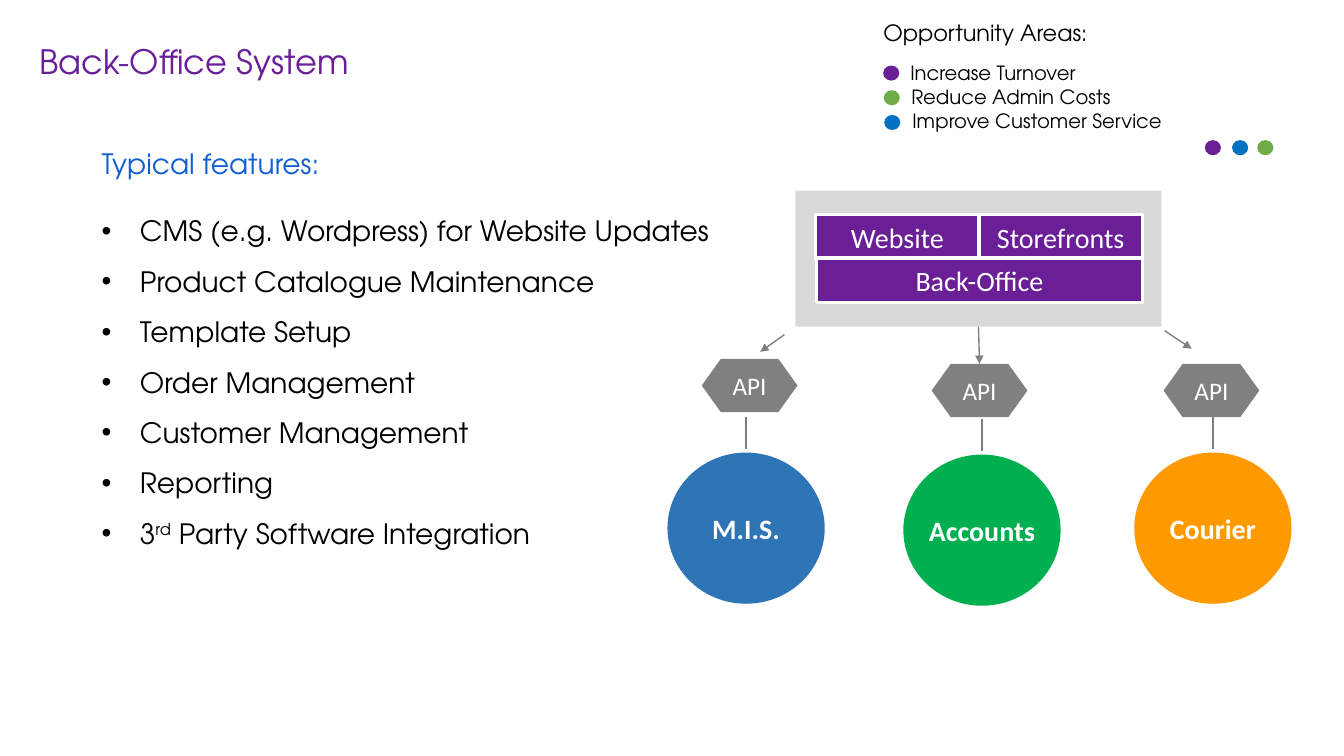
from dataclasses import dataclass

from lxml.etree import SubElement
from pptx import Presentation
from pptx.dml.color import RGBColor
from pptx.enum.shapes import MSO_CONNECTOR, MSO_SHAPE
from pptx.enum.text import MSO_ANCHOR, PP_ALIGN
from pptx.oxml.ns import qn
from pptx.util import Inches, Pt


@dataclass(frozen=True)
class Theme:
    heading_font: str = "TeX Gyre Adventor"
    diagram_font: str = "Calibri"
    title: str = "691F99"
    subtitle: str = "115FD4"
    black: str = "000000"
    white: str = "FFFFFF"
    purple: str = "6A1F96"
    blue: str = "0070C0"
    green: str = "70AD47"
    grey: str = "808080"
    panel: str = "D9D9D9"
    mis: str = "2E75B6"
    accounts: str = "00B050"
    courier: str = "FF9900"
    title_size: int = 24
    body_size: int = 20
    api_size: int = 18
    legend_title_size: int = 16
    legend_size: int = 14


THEME = Theme()

FEATURES = [
    [("CMS (e.g. Wordpress) for Website Updates", 0)],
    [("Product Catalogue Maintenance", 0)],
    [("Template Setup", 0)],
    [("Order Management", 0)],
    [("Customer Management", 0)],
    [("Reporting", 0)],
    [("3", 0), ("rd", 30000), (" Party Software Integration", 0)],
]
LEGEND = [
    ("Increase Turnover", THEME.purple),
    ("Reduce Admin Costs", THEME.green),
    ("Improve Customer Service", THEME.blue),
]
# label, colour, circle left and top, API left and top
SYSTEMS = [
    ("M.I.S.", THEME.mis, 6.62, 4.49, 6.96, 3.56),
    ("Accounts", THEME.accounts, 8.96, 4.51, 9.24, 3.61),
    ("Courier", THEME.courier, 11.25, 4.49, 11.54, 3.61),
]


def add_run(p, text, size, color, font, bold=False, baseline=0):
    r = p.add_run()
    r.text = text
    r.font.name = font
    r.font.size = Pt(size)
    r.font.bold = bold
    r.font.color.rgb = RGBColor.from_string(color)
    if baseline:
        r.font._element.set("baseline", str(baseline))


def add_text(s, x, y, w, h, text, size, color, align=PP_ALIGN.LEFT):
    tf = s.shapes.add_textbox(Inches(x), Inches(y), Inches(w), Inches(h)).text_frame
    tf.word_wrap = True
    p = tf.paragraphs[0]
    p.alignment = align
    add_run(p, text, size, color, THEME.heading_font)
    return tf


def add_shape(s, kind, x, y, w, h, fill, outline=None, label="", size=THEME.body_size, bold=False):
    sp = s.shapes.add_shape(kind, Inches(x), Inches(y), Inches(w), Inches(h))
    sp.shadow.inherit = False
    sp.fill.solid()
    sp.fill.fore_color.rgb = RGBColor.from_string(fill)
    if outline:
        sp.line.color.rgb = RGBColor.from_string(outline)
        sp.line.width = Pt(2.25)
    else:
        sp.line.fill.background()
    if label:
        tf = sp.text_frame
        tf.word_wrap = False
        tf.vertical_anchor = MSO_ANCHOR.MIDDLE
        p = tf.paragraphs[0]
        p.alignment = PP_ALIGN.CENTER
        add_run(p, label, size, THEME.white, THEME.diagram_font, bold)
    return sp


def add_dot(s, x, y, color):
    add_shape(s, MSO_SHAPE.OVAL, x, y, 0.16, 0.15, color)


def add_line(s, x1, y1, x2, y2, arrow=False):
    line = s.shapes.add_connector(
        MSO_CONNECTOR.STRAIGHT, Inches(x1), Inches(y1), Inches(x2), Inches(y2))
    line.line.color.rgb = RGBColor.from_string(THEME.grey)
    line.line.width = Pt(1)
    if arrow:
        SubElement(line.line._get_or_add_ln(), qn("a:tailEnd"), type="triangle")
    SubElement(line._element.spPr, qn("a:effectLst"))
    return line


def add_features(s):
    tf = add_text(s, 0.91, 1.4, 6.4, 4.14, "Typical features:", THEME.body_size, THEME.subtitle)
    tf.paragraphs[0].space_after = Pt(12.5)
    for runs in FEATURES:
        p = tf.add_paragraph()
        p.line_spacing = 1.5
        pPr = p._p.get_or_add_pPr()
        pPr.set("marL", str(Inches(0.38)))
        pPr.set("indent", str(Inches(-0.38)))
        SubElement(pPr, qn("a:buFont"), typeface="Arial")
        SubElement(pPr, qn("a:buChar"), char="•")
        for text, baseline in runs:
            add_run(p, text, THEME.body_size, THEME.black, THEME.heading_font, baseline=baseline)


def add_legend(s):
    add_text(s, 8.46, 0.14, 2.63, 0.37, "Opportunity Areas:",
             THEME.legend_title_size, THEME.black, PP_ALIGN.CENTER)
    for i, (label, color) in enumerate(LEGEND):
        add_dot(s, 8.76 + 0.005 * i, 0.65 + 0.245 * i, color)
        add_text(s, 8.93 + 0.01 * i, 0.56 + 0.235 * i, 2.97, 0.34,
                 label, THEME.legend_size, THEME.black)


def add_platform(s):
    panel = add_shape(s, MSO_SHAPE.RECTANGLE, 7.89, 1.89, 3.63, 1.35, THEME.panel)
    for label, x, y, w in [("Website", 8.09, 2.13, 1.62),
                           ("Storefronts", 9.71, 2.13, 1.62),
                           ("Back-Office", 8.1, 2.56, 3.23)]:
        add_shape(s, MSO_SHAPE.RECTANGLE, x, y, w, 0.44, THEME.purple, THEME.white, label)
    return panel


def add_systems(s):
    apis = []
    for label, color, x, y, api_x, api_y in SYSTEMS:
        apis.append(add_shape(s, MSO_SHAPE.FLOWCHART_PREPARATION, api_x, api_y, 0.95, 0.53,
                              THEME.grey, label="API", size=THEME.api_size))
        add_shape(s, MSO_SHAPE.OVAL, x, y, 1.56, 1.5, color, label=label, bold=True)
        center = x + 1.56 / 2
        add_line(s, center, y - 0.35, center, y - 0.04)
    return apis


def main():
    prs = Presentation()
    prs.slide_width, prs.slide_height = Inches(13.33), Inches(7.5)
    s = prs.slides.add_slide(prs.slide_layouts[6])

    # Title and feature list
    add_text(s, 0.29, 0.36, 4, 0.5, "Back-Office System", THEME.title_size, THEME.title)
    add_features(s)

    # Platform and connected systems
    panel = add_platform(s)
    apis = add_systems(s)
    add_line(s, 7.78, 3.32, 7.54, 3.49, arrow=True)
    middle = add_line(s, 9.71, 3.24, 9.72, 3.61, arrow=True)
    middle.begin_connect(panel, 2)
    middle.end_connect(apis[1], 0)
    add_line(s, 11.55, 3.28, 11.82, 3.46, arrow=True)

    # Opportunity markers and legend
    for x, color in [(11.95, THEME.purple), (12.22, THEME.blue), (12.47, THEME.green)]:
        add_dot(s, x, 1.39, color)
    add_legend(s)

    prs.save("out.pptx")


if __name__ == "__main__":
    main()
